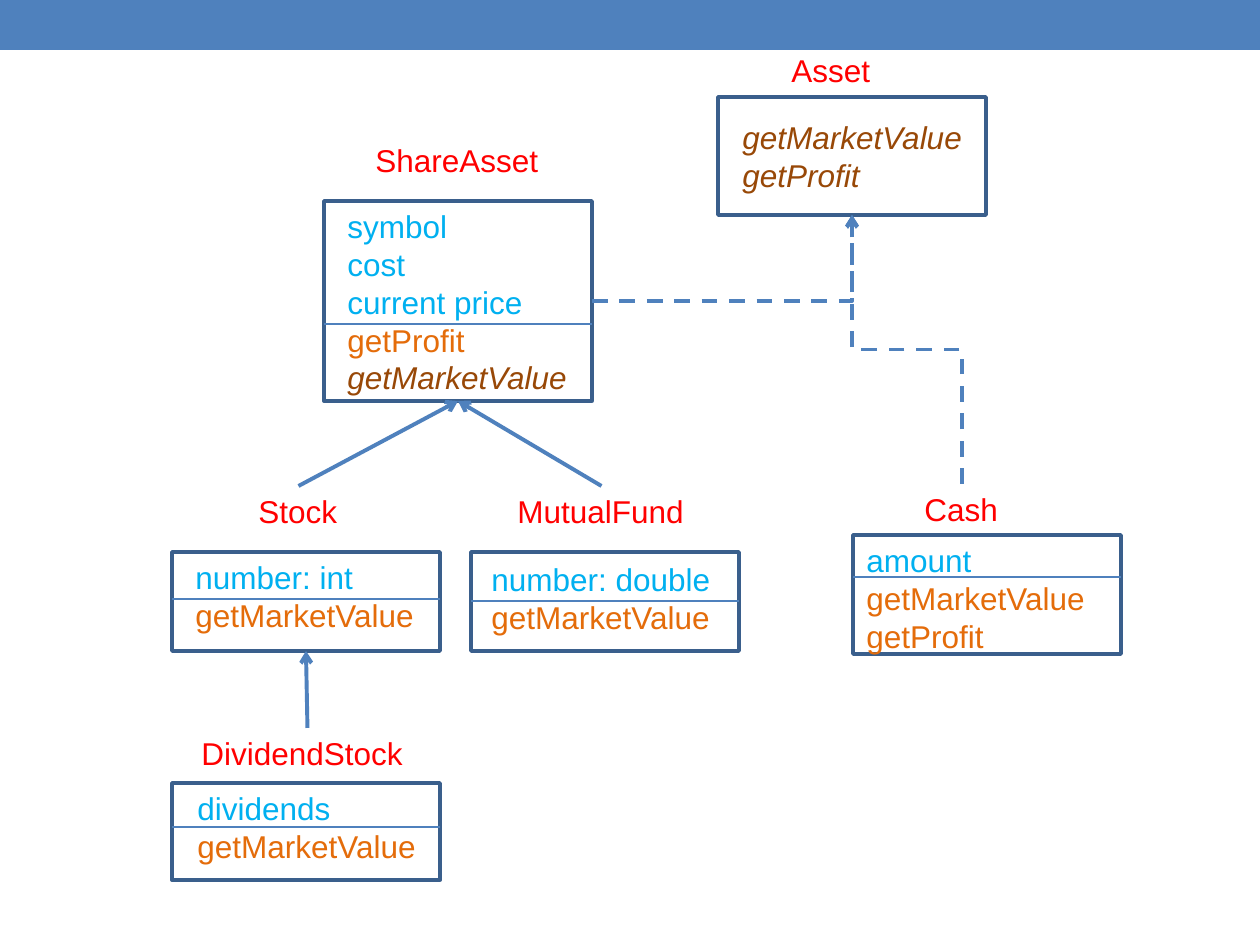
from lxml import etree
from pptx import Presentation
from pptx.dml.color import RGBColor
from pptx.enum.dml import MSO_LINE
from pptx.enum.shapes import MSO_CONNECTOR, MSO_SHAPE
from pptx.enum.text import MSO_AUTO_SIZE
from pptx.oxml.ns import qn
from pptx.util import Emu, Pt

RECTANGLE = MSO_SHAPE.RECTANGLE
STRAIGHT, ELBOW = MSO_CONNECTOR.STRAIGHT, MSO_CONNECTOR.ELBOW
DASH = MSO_LINE.DASH
GROW = MSO_AUTO_SIZE.SHAPE_TO_FIT_TEXT
TOP, BOTTOM, RIGHT = 0, 2, 3

BLUE, OUTLINE, RED = "4F81BD", "3A5F8C", "FF0000"
FIELD, METHOD, ABSTRACT = "00B0F0", "E46C0A", "984807"

PAGE_WIDTH, PAGE_HEIGHT, BAR_HEIGHT = 1260, 945, 50
BOX_WIDTH, TEXT_WIDTH, LABEL_HEIGHT = 268, 246, 50
LINE_HEIGHT, PADDING = 38, 13

CLASSES = [
    {"name": "Cash", "label": (912, 484, 100), "box": (853, 535, 119),
     "text": (854, 535), "divider": 577,
     "members": [("amount", FIELD), ("getMarketValue", METHOD), ("getProfit", METHOD)]},
    {"name": "Stock", "label": (246, 486, 105), "box": (172, 552, 99),
     "text": (183, 552), "divider": 599,
     "members": [("number: int", FIELD), ("getMarketValue", METHOD)]},
    {"name": "MutualFund", "label": (505, 486, 193), "box": (471, 552, 99),
     "text": (479, 554), "divider": 601,
     "members": [("number: double", FIELD), ("getMarketValue", METHOD)]},
    {"name": "DividendStock", "label": (189, 728, 237), "box": (172, 783, 97),
     "text": (185, 783), "divider": 827,
     "members": [("dividends", FIELD), ("getMarketValue", METHOD)]},
    {"name": "ShareAsset", "label": (363, 135, 190), "box": (324, 201, 200),
     "text": (335, 201), "divider": 324,
     "members": [("symbol", FIELD), ("cost", FIELD), ("current price", FIELD),
                 ("getProfit", METHOD), ("getMarketValue", ABSTRACT)]},
    {"name": "Asset", "label": (779, 45, 105), "box": (718, 97, 118),
     "text": (730, 112), "divider": None,
     "members": [("getMarketValue", ABSTRACT), ("getProfit", ABSTRACT)]},
]
EXTENDS = [("DividendStock", "Stock"), ("Stock", "ShareAsset"), ("MutualFund", "ShareAsset")]


def px(value):
    return Emu(round(value * 914400 / 126))


def color(value):
    return RGBColor.from_string(value)


def add_rectangle(page, left, top, width, height, fill=None, line=None):
    box = page.shapes.add_shape(RECTANGLE, px(left), px(top), px(width), px(height))
    box.shadow.inherit = False
    if fill:
        box.fill.solid()
        box.fill.fore_color.rgb = color(fill)
    else:
        box.fill.background()
    if line:
        box.line.color.rgb = color(line)
        box.line.width = Pt(2.08)
    else:
        box.line.fill.background()
    return box


def add_text(page, lines, left, top, width, height, size=18, font="Arial", spacing=21.6):
    box = page.shapes.add_textbox(px(left), px(top), px(width), px(height))
    frame = box.text_frame
    frame.word_wrap = False
    frame.auto_size = GROW
    for index, (text, ink) in enumerate(lines):
        para = frame.add_paragraph() if index else frame.paragraphs[0]
        para.line_spacing = Pt(spacing)
        span = para.add_run()
        span.text = text
        span.font.size = Pt(size)
        span.font.name = font
        span.font.color.rgb = color(ink)
        span.font.italic = ink == ABSTRACT
    return box


def add_line(page, kind, begin=(0, 0), end=(0, 0), width=2.25, arrow=True, dash=None):
    line = page.shapes.add_connector(kind, *map(px, begin + end))
    line.line.color.rgb = color(BLUE)
    line.line.width = Pt(width)
    if dash:
        line.line.dash_style = dash
    properties = line._element.spPr
    if arrow:
        etree.SubElement(properties.find(qn("a:ln")), qn("a:tailEnd"), type="arrow")
    etree.SubElement(properties, qn("a:effectLst"))
    return line


def join(line, child, site, parent):
    line.begin_connect(child, site)
    line.end_connect(parent, BOTTOM)


def turn_upward(line):
    left, top, width, height = line.left, line.top, line.width, line.height
    line.left = left + (width - height) // 2
    line.top = top + (height - width) // 2
    line.width, line.height = height, width
    frame = line._element.spPr.find(qn("a:xfrm"))
    frame.set("rot", "16200000")
    frame.set("flipH", "0")
    frame.set("flipV", "1")


def main():
    deck = Presentation()
    deck.slide_width, deck.slide_height = px(PAGE_WIDTH), px(PAGE_HEIGHT)
    page = deck.slides.add_slide(deck.slide_layouts[6])
    add_rectangle(page, 0, 0, PAGE_WIDTH, BAR_HEIGHT, fill=BLUE)

    boxes, labels = {}, {}
    for item in CLASSES:
        name, members = item["name"], item["members"]
        left, top, height = item["box"]
        boxes[name] = add_rectangle(page, left, top, BOX_WIDTH, height, line=OUTLINE)
        add_text(page, members, *item["text"], TEXT_WIDTH, PADDING + LINE_HEIGHT * len(members))
        labels[name] = add_text(page, [(name, RED)], *item["label"], LABEL_HEIGHT)
        if item["divider"]:
            add_line(page, STRAIGHT, (left, item["divider"]),
                     (left + BOX_WIDTH, item["divider"]), width=0.75, arrow=False)

    for child, parent in EXTENDS:
        join(add_line(page, STRAIGHT), labels[child], TOP, boxes[parent])

    share_link = add_line(page, ELBOW, dash=DASH)
    join(share_link, boxes["ShareAsset"], RIGHT, boxes["Asset"])
    share_link._element.spPr.find(qn("a:prstGeom")).set("prst", "bentConnector2")

    cash_link = add_line(page, ELBOW, dash=DASH)
    join(cash_link, labels["Cash"], TOP, boxes["Asset"])
    turn_upward(cash_link)

    deck.save("out.pptx")


if __name__ == "__main__":
    main()
